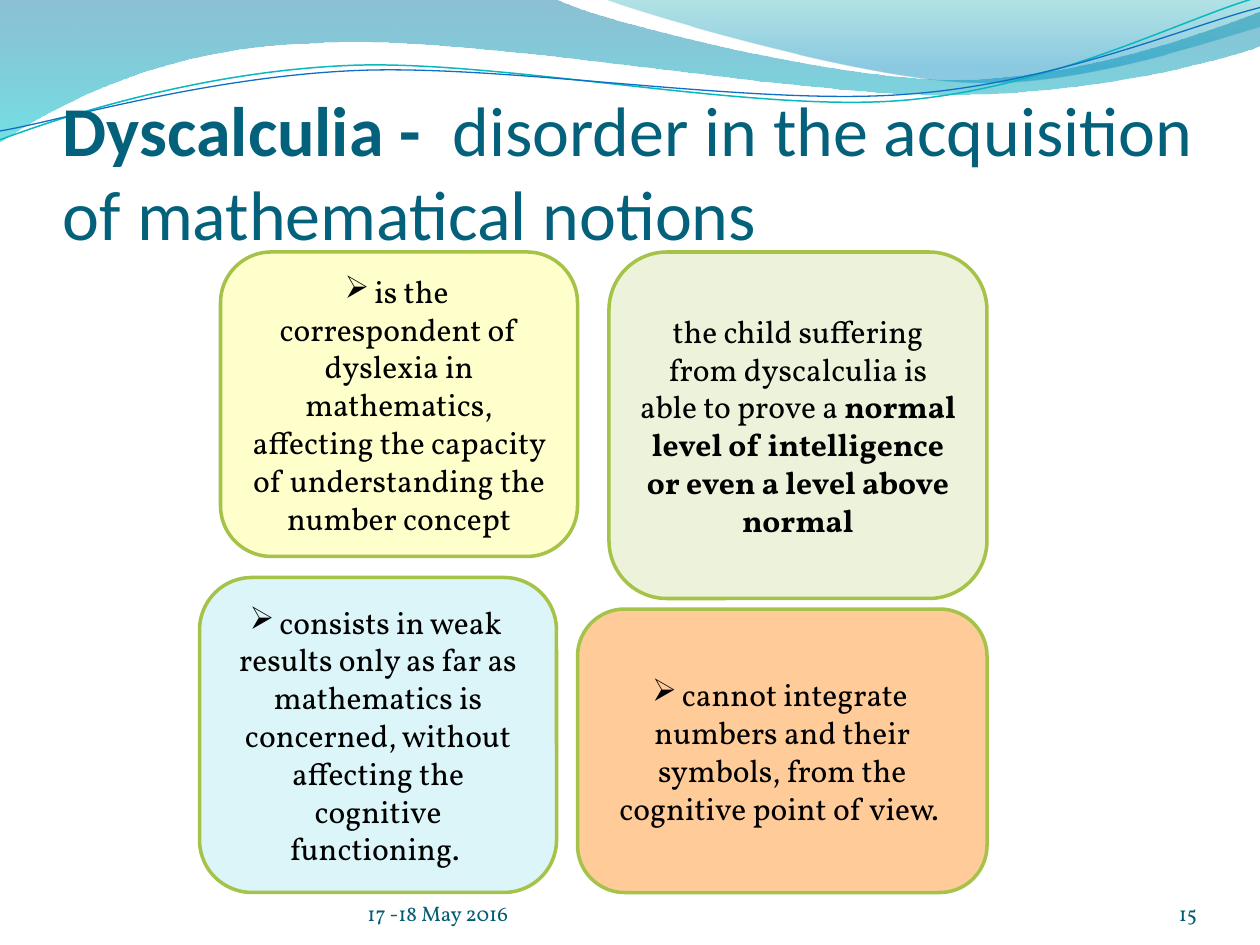
from lxml import etree
from pptx import Presentation
from pptx import util as u
from pptx.dml.color import RGBColor
from pptx.enum import shapes, text
from pptx.oxml.ns import qn

CELL = u.Inches(1) / 12  # grid of 120 columns by 90 rows
UNITS = 100  # outline units to the inch
BODY, HEAD = "Vollkorn", "Calibri"
COLORS = dict(
    title="04617B", footer="045D75", ink="000000", border="A5C249",
    yellow="FFFFCC", green="EDF3DB", blue="DBF5F9", orange="FFCC99",
    deep="0074A1", cyan="00C6CF", teal="00A1A9", sky="008BBF",
    line_teal="0AB8BF", line_blue="0F6FC6",
)

# Waves in inches: a pair is a corner, six numbers are a Bezier curve
BROAD_WAVE = [
    (0, 0), (4.4, -0.01), (4.76, 0.17, 6.64, 0.63, 7.58, 0.63),
    (8.53, 0.63, 9.58, 0.26, 10, 0.09), (10.01, 0.36),
    (9.83, 0.44, 8.7, 0.76, 7.46, 0.75), (6.22, 0.75, 3.82, 0.28, 2.57, 0.34),
    (1.29, 0.36, 0.46, 0.83, -0.01, 1.13), (0, 0),
]
RIGHT_WAVE = [
    (4.79, -0.01), (5.09, 0.11, 6.82, 0.62, 7.69, 0.65),
    (8.56, 0.69, 9.61, 0.32, 10, 0.21), (10, 0), (4.79, -0.01),
]
TEAL_LINE = [
    (0, 1.11), (0.48, 0.93, 1.58, 0.57, 2.77, 0.52),
    (3.95, 0.47, 5.93, 0.89, 7.13, 0.8), (8.33, 0.71, 9.38, 0.15, 9.98, -0.02),
]
BLUE_LINE = [
    (0, 1.04), (0.47, 0.96, 1.64, 0.61, 2.83, 0.56),
    (4.03, 0.51, 5.97, 0.84, 7.17, 0.75), (8.36, 0.67, 9.41, 0.21, 10, 0.06),
]


def rgb(name):
    return RGBColor.from_string(COLORS[name])


def cells(*values):
    return [u.Emu(round(v * CELL)) for v in values]


def set_all(obj, **values):
    for name, value in values.items():
        setattr(obj, name, value)


def add_path(s, outline, closed):
    """Build the outline through its nodes, then bend the curved pieces."""
    parts = [[round(v * UNITS) for v in part] for part in outline]
    nodes = [part[-2:] for part in parts]
    left, top = (min(axis) for axis in zip(*nodes))
    builder = s.shapes.build_freeform(*nodes[0], scale=u.Inches(1) / UNITS)
    builder.add_line_segments(nodes[1:], close=closed)
    sp = builder.convert_to_shape()
    sp.shadow.inherit = False
    segments = list(sp._element.spPr.iter(qn("a:lnTo")))
    for segment, part in zip(segments, parts[1:]):
        if len(part) == 6:
            curve = etree.Element(qn("a:cubicBezTo"))
            for x, y in zip(part[::2], part[1::2]):
                etree.SubElement(curve, qn("a:pt"), x=str(x - left), y=str(y - top))
            segment.getparent().replace(segment, curve)
    return sp


def add_wave(s, outline, stops):
    """Filled wave; each stop is (position, colour, opacity in percent)."""
    sp = add_path(s, outline, True)
    sp.line.fill.background()
    sp.fill.gradient()
    sp.fill.gradient_angle = 270
    for stop, (position, color, _) in zip(sp.fill.gradient_stops, stops):
        stop.position = position
        stop.color.rgb = rgb(color)
    for clr, (_, _, opacity) in zip(sp._element.spPr.iter(qn("a:srgbClr")), stops):
        etree.SubElement(clr, qn("a:alpha"), val=str(opacity * 1000))


def add_thread(s, outline, color, width):
    sp = add_path(s, outline, False)
    sp.fill.background()
    sp.line.color.rgb = rgb(color)
    sp.line.width = u.Pt(width)


def write(tf, runs, color, align, **font):
    """Fill a frame with one paragraph of (text, bold) runs."""
    p = tf.paragraphs[0]
    p.alignment = align
    for words, bold in runs:
        r = p.add_run()
        r.text = words
        set_all(r.font, bold=bold, **font)
        r.font.color.rgb = rgb(color)
    return p


def add_text(s, box, runs, color, align=text.PP_ALIGN.LEFT, top=0, **font):
    tf = s.shapes.add_textbox(*cells(*box)).text_frame
    set_all(tf, word_wrap=True, vertical_anchor=text.MSO_ANCHOR.BOTTOM, margin_left=0,
            margin_right=0, margin_top=u.Inches(top), margin_bottom=0)
    write(tf, runs, color, align, **font)


def add_card(s, box, fill, runs, bullet):
    sp = s.shapes.add_shape(shapes.MSO_SHAPE.FLOWCHART_ALTERNATE_PROCESS, *cells(*box))
    sp.shadow.inherit = False
    sp.fill.solid()
    sp.fill.fore_color.rgb = rgb(fill)
    sp.line.color.rgb = rgb("border")
    sp.line.width = u.Pt(2)
    tf = sp.text_frame
    set_all(tf, word_wrap=True, vertical_anchor=text.MSO_ANCHOR.MIDDLE)
    p = write(tf, runs, "ink", text.PP_ALIGN.CENTER, size=u.Pt(18), name=BODY)
    if bullet:
        etree.SubElement(p._p.get_or_add_pPr(), qn("a:buChar"), char="➢")


def main():
    prs = Presentation()
    set_all(prs, slide_width=u.Inches(10), slide_height=u.Inches(7.5))
    s = prs.slides.add_slide(prs.slide_layouts[6])

    # Waves along the top edge
    add_wave(s, BROAD_WAVE, [(0, "deep", 45), (1, "cyan", 55)])
    add_wave(s, RIGHT_WAVE, [(0, "teal", 30), (0.8, "sky", 45)])
    add_thread(s, TEAL_LINE, "line_teal", 0.85)
    add_thread(s, BLUE_LINE, "line_blue", 0.75)

    # Title
    add_text(s, (6, 9.25, 108, 15), [
        ("Dyscalculia -  ", True),
        ("disorder in the acquisition of mathematical notions", False),
    ], "title", top=0.05, size=u.Pt(40), name=HEAD)

    # Four cards
    cards = [
        ((21, 24, 34, 29), "yellow", [
            ("is the correspondent of dyslexia in mathematics, affecting the "
             "capacity of understanding the number concept", False)], True),
        ((19, 55, 34, 30), "blue", [
            ("consists in weak results only as far as mathematics is concerned, "
             "without affecting the cognitive functioning. ", False)], True),
        ((55, 58, 39, 27), "orange", [
            ("cannot integrate numbers and their symbols, from the cognitive "
             "point of view. ", False)], True),
        ((58, 24, 36, 33), "green", [
            ("the child suffering from dyscalculia is able to prove a ", False),
            ("normal level of intelligence or even a level above normal", True)], False),
    ]
    for card in cards:
        add_card(s, *card)

    # Date and page number
    small = dict(size=u.Pt(12), name=BODY)
    add_text(s, (35, 83.4, 44, 4.8), [("17 -18 May 2016", False)], "footer", **small)
    add_text(s, (104, 83.4, 10, 4.8), [("15", False)], "footer", text.PP_ALIGN.RIGHT, **small)

    prs.save("out.pptx")


if __name__ == "__main__":
    main()
